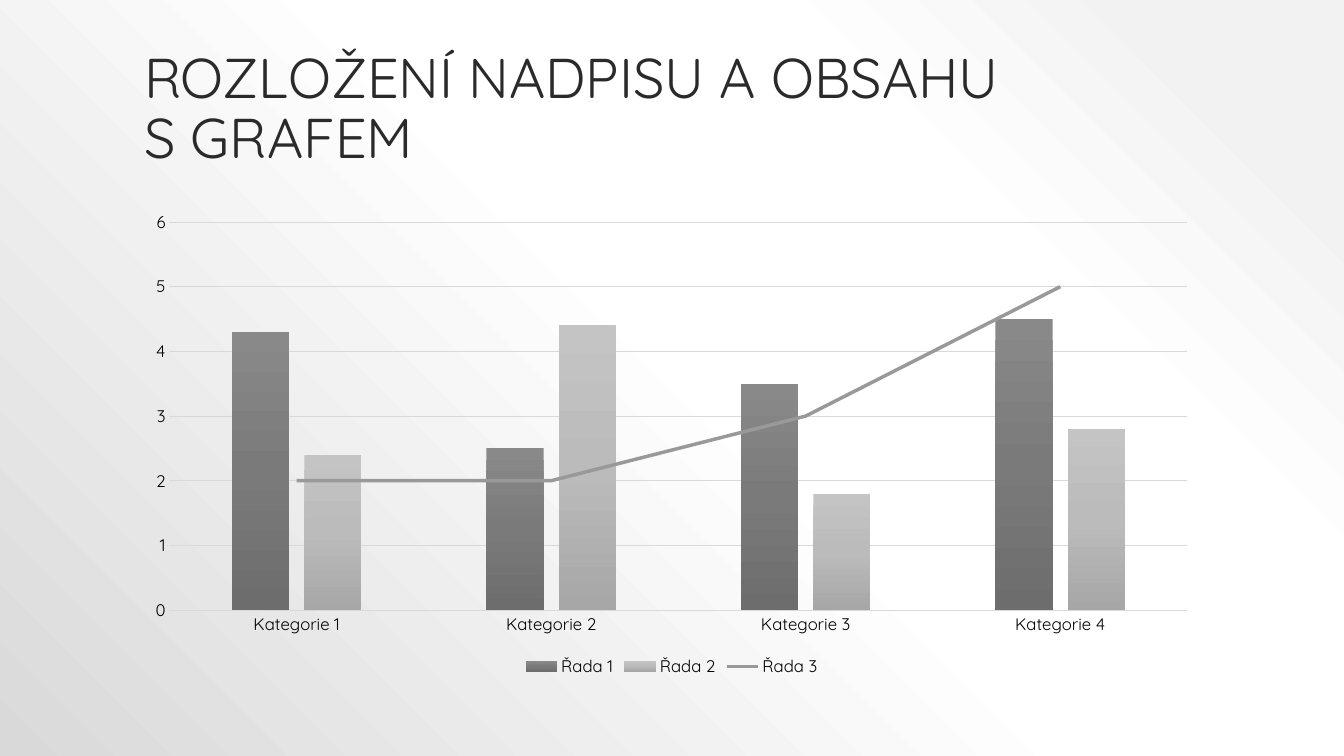
import copy
import pptx
import pptx.chart.data
import pptx.dml.color
import pptx.enum.chart
import pptx.enum.text
import pptx.oxml
import pptx.oxml.ns
import pptx.util

TITLE = "ROZLOŽENÍ NADPISU A OBSAHU \vS GRAFEM"
CATEGORIES = ["Kategorie 1", "Kategorie 2", "Kategorie 3", "Kategorie 4"]
SERIES = [
    ("Řada 1", [4.3, 2.5, 3.5, 4.5]),
    ("Řada 2", [2.4, 4.4, 1.8, 2.8]),
    ("Řada 3", [2, 2, 3, 5]),
]
BAR_STOPS = [
    [(0, "898989"), (50, "7A7A7A"), (100, "6D6D6D")],
    [(0, "C4C4C4"), (50, "BBBBBB"), (100, "A7A7A7")],
]
BACKGROUND_STOPS = [(10, "F2F2F2"), (28, "FFFFFF"), (48, "FFFFFF"), (100, "D9D9D9")]
DOWNWARD = '<a:lin ang="5400000" scaled="0"/>'
FROM_TOP_RIGHT = '<a:path path="circle"><a:fillToRect l="100000" b="100000"/></a:path>'
FONT = "Quicksand"
SLIDE_SIZE = (1344, 756)
TITLE_BOX = (134, 30, 1075, 146)
CHART_BOX = (134, 202, 1075, 479)
GRID = "D9D9D9"
LINE = "999999"

qn = pptx.oxml.ns.qn
Pt = pptx.util.Pt


def px(*lengths):
    return [pptx.util.Emu(round(n * 914400 / 100.8)) for n in lengths]


def rgb(value):
    return pptx.dml.color.RGBColor.from_string(value)


def set_font(font, size, color):
    font.name = FONT
    font.size = Pt(size)
    font.color.rgb = rgb(color)


def set_line(line, width, color):
    line.width = Pt(width)
    line.color.rgb = rgb(color)


def set_gradient(fill, element, stops, direction):
    fill.solid()
    fill.fore_color.rgb = rgb(stops[0][1])
    solid = element.find(".//" + qn("a:solidFill"))
    marks = "".join(
        f'<a:gs pos="{pos * 1000}"><a:srgbClr val="{color}"/></a:gs>'
        for pos, color in stops
    )
    gradient = pptx.oxml.parse_xml(
        f'<a:gradFill {pptx.oxml.ns.nsdecls("a")} rotWithShape="1">'
        f"<a:gsLst>{marks}</a:gsLst>{direction}</a:gradFill>"
    )
    solid.getparent().replace(solid, gradient)


def move_last_series_to_line(chart):
    bars = chart.plots[0]._element
    ser = bars.findall(qn("c:ser"))[-1]
    for invert in ser.findall(qn("c:invertIfNegative")):
        ser.remove(invert)
    lines = pptx.oxml.parse_xml(
        f'<c:lineChart {pptx.oxml.ns.nsdecls("c")}><c:grouping val="standard"/>'
        '<c:varyColors val="0"/><c:marker val="1"/></c:lineChart>'
    )
    lines.insert(2, ser)
    for axis_id in bars.findall(qn("c:axId")):
        lines.append(copy.deepcopy(axis_id))
    bars.addnext(lines)


def format_axis(axis):
    axis.major_tick_mark = axis.minor_tick_mark = pptx.enum.chart.XL_TICK_MARK.NONE
    set_font(axis.tick_labels.font, 12, "000000")


def add_combined_chart(s):
    data = pptx.chart.data.CategoryChartData()
    data.categories = CATEGORIES
    for name, values in SERIES:
        data.add_series(name, values)
    kind = pptx.enum.chart.XL_CHART_TYPE.COLUMN_CLUSTERED
    chart = s.shapes.add_chart(kind, *px(*CHART_BOX), data).chart
    set_font(chart.font, 10, "545454")
    chart.has_title = False

    move_last_series_to_line(chart)
    bars, lines = chart.plots
    bars.gap_width, bars.overlap = 219, -27
    bars.vary_by_categories = False
    for ser, stops in zip(bars.series, BAR_STOPS):
        set_gradient(ser.format.fill, ser._element, stops, DOWNWARD)
    trend = lines.series[0]
    set_line(trend.format.line, 2.5, LINE)
    trend.marker.style = pptx.enum.chart.XL_MARKER_STYLE.NONE
    trend.smooth = False

    format_axis(chart.category_axis)
    set_line(chart.category_axis.format.line, 0.75, GRID)
    axis = chart.value_axis
    format_axis(axis)
    axis.format.line.fill.background()
    axis.minimum_scale, axis.maximum_scale, axis.major_unit = 0, 6, 1
    set_line(axis.major_gridlines.format.line, 0.75, GRID)

    chart.has_legend = True
    chart.legend.position = pptx.enum.chart.XL_LEGEND_POSITION.BOTTOM
    chart.legend.include_in_layout = False
    set_font(chart.legend.font, 12, "000000")


def add_title(s):
    title = s.shapes.title
    title.left, title.top, title.width, title.height = px(*TITLE_BOX)
    tf = title.text_frame
    tf.text = TITLE
    tf.word_wrap = True
    tf.auto_size = pptx.enum.text.MSO_AUTO_SIZE.NONE
    tf.vertical_anchor = pptx.enum.text.MSO_ANCHOR.BOTTOM
    p = tf.paragraphs[0]
    p.alignment = pptx.enum.text.PP_ALIGN.LEFT
    p.line_spacing = 0.9
    for r in p.runs:
        set_font(r.font, 40, "2A2A2A")


def main():
    prs = pptx.Presentation()
    prs.slide_width, prs.slide_height = px(*SLIDE_SIZE)
    s = prs.slides.add_slide(prs.slide_layouts[5])
    set_gradient(s.background.fill, s._element, BACKGROUND_STOPS, FROM_TOP_RIGHT)
    add_title(s)
    add_combined_chart(s)
    prs.save("out.pptx")


if __name__ == "__main__":
    main()
